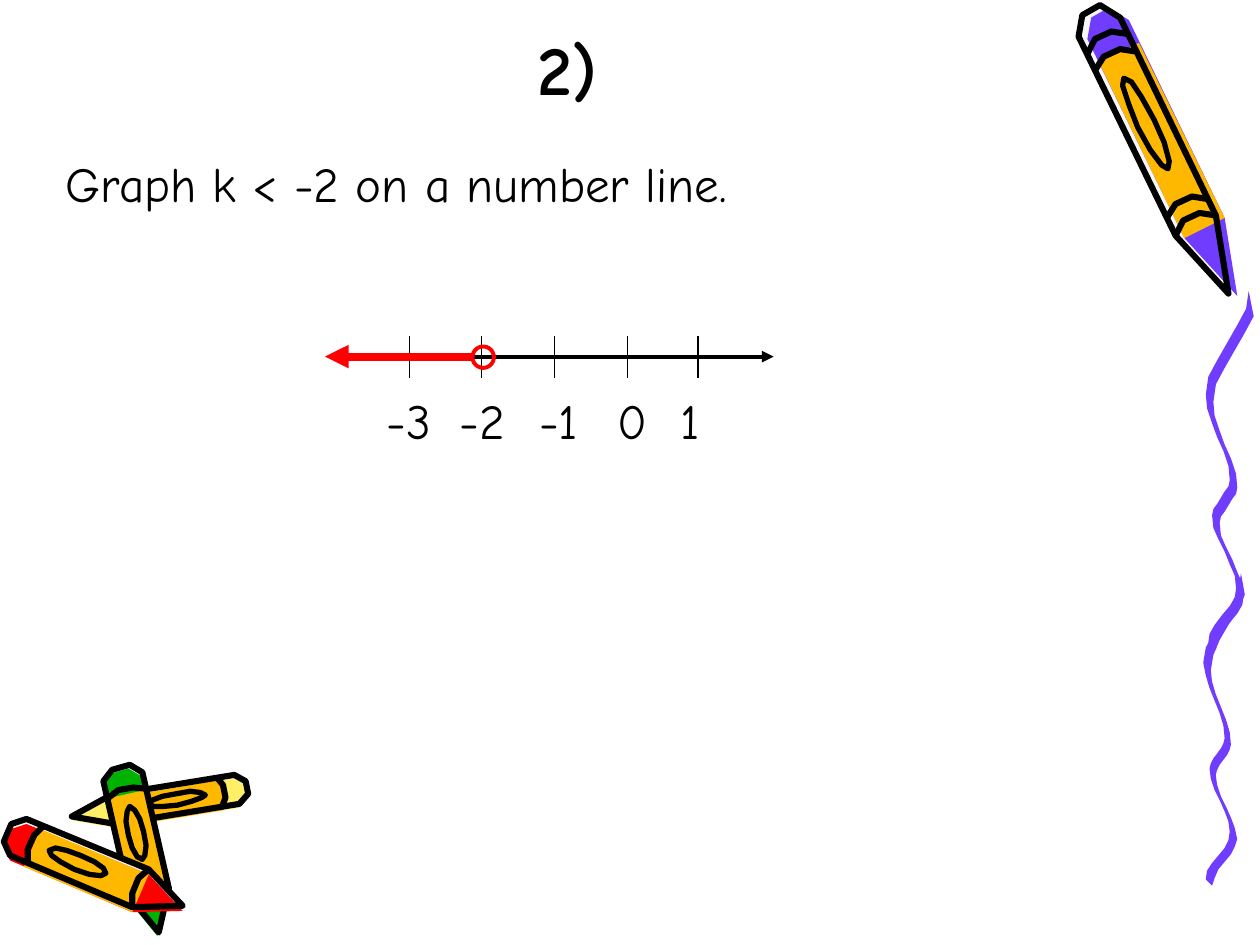
from dataclasses import dataclass
from math import cos, hypot, pi, sin
from lxml.etree import SubElement as Sub
from pptx import Presentation
from pptx.dml.color import RGBColor
from pptx.enum.shapes import MSO_CONNECTOR as Conn, MSO_SHAPE as Shape
from pptx.enum.text import MSO_ANCHOR as Anchor, MSO_AUTO_SIZE as Fit, PP_ALIGN as Align
from pptx.oxml.ns import qn
from pptx.util import Pt

PX = 9144
FONT = "Comic Neue"
BLACK = RGBColor(0x00, 0x00, 0x00)
PALE = RGBColor(0xF8, 0xF8, 0xF8)
RED = RGBColor(0xFF, 0x00, 0x00)
GREEN = RGBColor(0x00, 0xB2, 0x00)
GOLD = RGBColor(0xFF, 0xB8, 0x00)
LEMON = RGBColor(0xFF, 0xEF, 0x66)
VIOLET = RGBColor(0x70, 0x3D, 0xFF)

Point = tuple[float, float]


@dataclass(frozen=True)
class Crayon:
    tail: tuple[int, int]
    tip: tuple[int, int]
    half: int
    tint: RGBColor
    shift: tuple[int, int]
    bands: tuple[int, ...]

    def place(self, along: float, across: float) -> Point:
        (x, y), (end_x, end_y) = self.tail, self.tip
        run, rise = end_x - x, end_y - y
        side = self.half * across / 100 / hypot(run, rise)
        return x + run * along / 100 - rise * side, y + rise * along / 100 + run * side

    def trace(self, points: list[Point], moved: bool = False) -> list[Point]:
        dx, dy = self.shift if moved else (0, 0)
        return [(x + dx, y + dy) for x, y in (self.place(*p) for p in points)]


@dataclass(frozen=True)
class Wave:
    start: tuple[int, int]
    scale: float


@dataclass(frozen=True)
class Mark:
    text: str
    tick: int
    left: int
    width: int


@dataclass(frozen=True)
class Line:
    start: tuple[int, int]
    end: tuple[int, int]
    color: RGBColor
    width: float
    ends: tuple[str, ...] = ()


NECK = 76
HULL = [(0, -45), (0, 45), (6, 100), (NECK, 100), (100, 0), (NECK, -100), (6, -100)]
WRAP = [(14, -100), (14, 100), (NECK, 100), (NECK, -100)]
CRAYONS = [
    Crayon((196, 625), (57, 648), 12, LEMON, (0, 3), (16, NECK)),
    Crayon((96, 609), (126, 740), 16, GREEN, (-1, 3), (16, NECK)),
    Crayon((6, 661), (145, 719), 16, RED, (0, 4), (16, NECK)),
    Crayon((866, 8), (975, 233), 18, VIOLET, (7, 2), (12, 18, 70, NECK)),
]
TURNS = [(0, 0), (-34, 82), (-15, 150), (-29, 178), (-10, 236), (-32, 279)]
NIB = 6
STEPS = 6
WAVES = [Wave((985, 455), 0.87), Wave((991, 231), 1)]
AXIS = Line((264, 283), (614, 283), BLACK, 2.25, ("headEnd", "tailEnd"))
RAY = Line((258, 283), (375, 283), RED, 4.5, ("headEnd",))
MARKS = [
    Mark("-3", 325, 297, 61),
    Mark("-2", 382, 355, 61),
    Mark("-1", 440, 418, 65),
    Mark("0", 498, 480, 50),
    Mark("1", 554, 530, 50),
]


def draw_path(shapes, points: list[Point], fill: RGBColor | None = None,
              width: float = 0, close: bool = True) -> None:
    pen = shapes.build_freeform(*points[0], scale=PX)
    pen.add_line_segments(points[1:], close=close)
    form = pen.convert_to_shape()
    form.shadow.inherit = False
    if fill is None:
        form.fill.background()
    else:
        form.fill.solid()
        form.fill.fore_color.rgb = fill
    if width:
        form.line.color.rgb = BLACK
        form.line.width = Pt(width)
    else:
        form.line.fill.background()


def draw_crayon(shapes, crayon: Crayon) -> None:
    turns = [2 * pi * i / 12 for i in range(12)]
    oval = [(40 + 16 * cos(a), 38 * sin(a)) for a in turns]
    draw_path(shapes, crayon.trace(HULL), PALE)
    draw_path(shapes, crayon.trace(HULL, True), crayon.tint)
    draw_path(shapes, crayon.trace(WRAP, True), GOLD)
    draw_path(shapes, crayon.trace(HULL), width=3.5)
    draw_path(shapes, crayon.trace(oval), width=3)
    for band in crayon.bands:
        arc = [(band, -100), (band - 3, -40), (band - 3, 40), (band, 100)]
        draw_path(shapes, crayon.trace(arc), width=3.5, close=False)


def draw_wave(shapes, wave: Wave) -> None:
    path = [TURNS[0]]
    for (x, y), (next_x, next_y) in zip(TURNS, TURNS[1:]):
        for step in range(1, STEPS + 1):
            part = step / STEPS
            ease = (1 - cos(pi * part)) / 2
            path.append((x + (next_x - x) * ease, y + (next_y - y) * part))
    edge = [(x + NIB, y + NIB) for x, y in reversed(path[1:])]
    left, top = wave.start
    draw_path(shapes, [(left + x * wave.scale, top + y * wave.scale) for x, y in path + edge], VIOLET)


def draw_line(shapes, line: Line) -> None:
    ends = [v * PX for v in line.start + line.end]
    link = shapes.add_connector(Conn.STRAIGHT, *ends)
    link.line.color.rgb = line.color
    link.line.width = Pt(line.width)
    for end in line.ends:
        Sub(link.line._get_or_add_ln(), qn(f"a:{end}"), type="triangle")
    Sub(link._element.spPr, qn("a:effectLst"))


def place(shape, left: int, top: int, width: int, height: int) -> None:
    shape.left, shape.top = left * PX, top * PX
    shape.width, shape.height = width * PX, height * PX


def write(shape, text: str, size: int = 28, bold: bool = False,
          align: Align = Align.LEFT, anchor: Anchor = Anchor.TOP) -> None:
    frame = shape.text_frame
    frame.text = text
    frame.word_wrap = True
    frame.auto_size = Fit.NONE
    frame.vertical_anchor = anchor
    para = frame.paragraphs[0]
    para.alignment = align
    para.space_before = Pt(0)
    font = para.runs[0].font
    font.name, font.size, font.bold = FONT, Pt(size), bold
    font.color.rgb = BLACK


def draw_mark(shapes, mark: Mark) -> None:
    draw_line(shapes, Line((mark.tick, 267), (mark.tick, 300), BLACK, 0.75))
    box = shapes.add_textbox(0, 0, 0, 0)
    place(box, mark.left, 305, mark.width, 57)
    write(box, mark.text)


def draw_ring(shapes) -> None:
    ring = shapes.add_shape(Shape.OVAL, 0, 0, 0, 0)
    place(ring, 375, 275, 17, 17)
    ring.shadow.inherit = False
    ring.fill.background()
    ring.line.color.rgb = RED
    ring.line.width = Pt(2.25)


def main() -> None:
    deck = Presentation()
    deck.slide_width, deck.slide_height = 1000 * PX, 750 * PX
    slide = deck.slides.add_slide(deck.slide_layouts[1])
    shapes = slide.shapes
    title, body = slide.placeholders
    place(title, 75, 17, 751, 75)
    write(title, "2)", 40, True, Align.CENTER, Anchor.BOTTOM)
    place(body, 42, 117, 858, 57)
    write(body, "Graph k < -2 on a number line.")
    props = body.text_frame.paragraphs[0]._p.get_or_add_pPr()
    props.set("marL", "0")
    props.set("indent", "0")
    Sub(props, qn("a:buNone"))
    for crayon in CRAYONS:
        draw_crayon(shapes, crayon)
    for wave in WAVES:
        draw_wave(shapes, wave)
    draw_line(shapes, AXIS)
    for mark in MARKS:
        draw_mark(shapes, mark)
    draw_ring(shapes)
    draw_line(shapes, RAY)
    deck.save("out.pptx")


if __name__ == "__main__":
    main()
